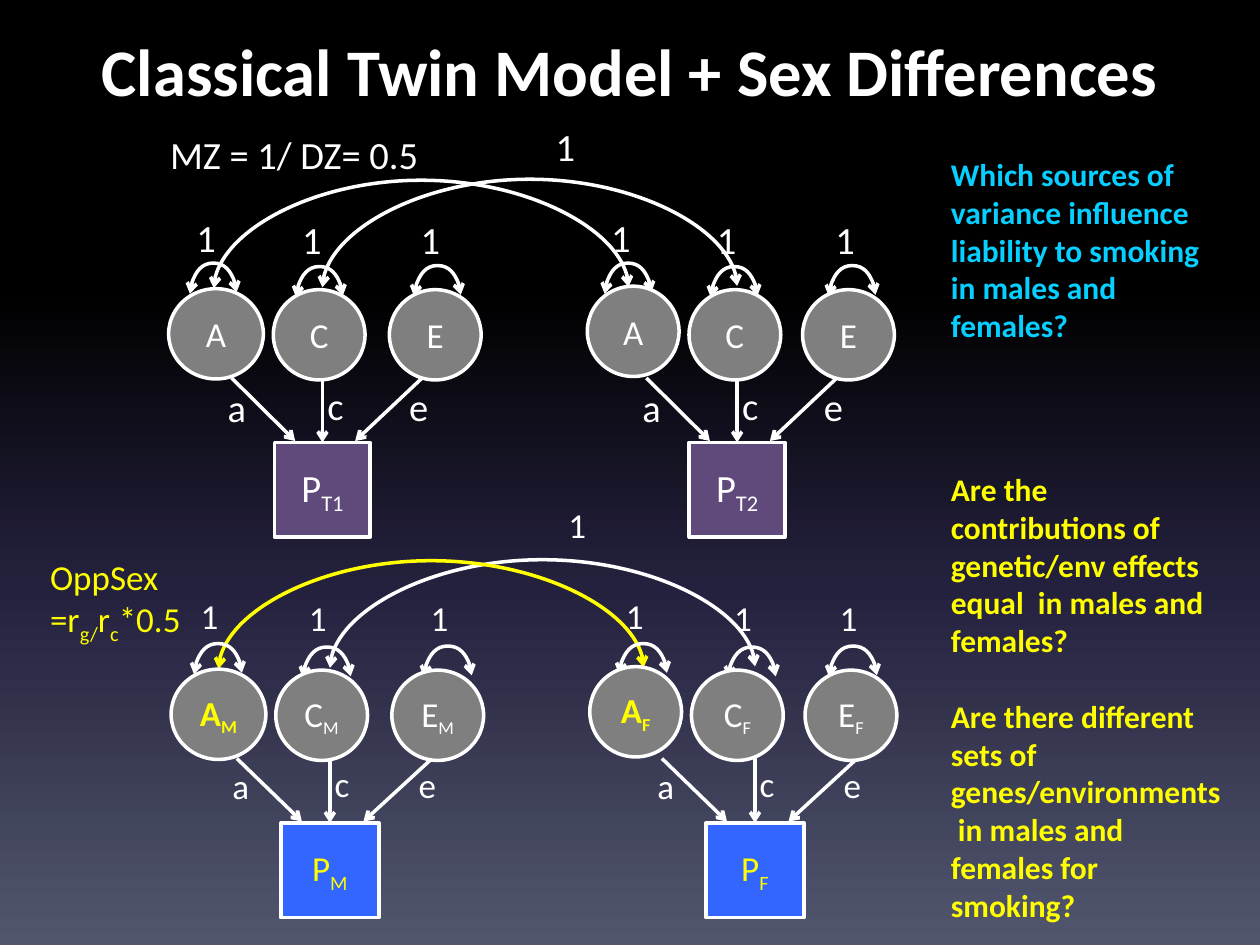
import lxml.etree
import pptx
import pptx.dml.color
import pptx.enum.shapes
import pptx.enum.text
import pptx.oxml.ns
import pptx.util

Cm = pptx.util.Cm
Pt = pptx.util.Pt
RGBColor = pptx.dml.color.RGBColor
SHAPE = pptx.enum.shapes.MSO_SHAPE
LINK = pptx.enum.shapes.MSO_CONNECTOR
ANCHOR = pptx.enum.text.MSO_ANCHOR
ALIGN = pptx.enum.text.PP_ALIGN
FIT = pptx.enum.text.MSO_AUTO_SIZE
qn = pptx.oxml.ns.qn

WHITE = RGBColor(0xFF, 0xFF, 0xFF)
YELLOW = RGBColor(0xFF, 0xFF, 0x00)
CYAN = RGBColor(0x07, 0xCF, 0xFF)
GRAY = RGBColor(0x7F, 0x7F, 0x7F)
PURPLE = RGBColor(0x60, 0x4A, 0x7B)
BLUE = RGBColor(0x33, 0x66, 0xFF)
STOPS = [
    (0, RGBColor(0x00, 0x00, 0x00)),
    (31, RGBColor(0x00, 0x00, 0x00)),
    (62, RGBColor(0x24, 0x21, 0x3E)),
    (100, RGBColor(0x51, 0x56, 0x6D)),
]

deck = pptx.Presentation()
deck.slide_width = Cm(25.4)
deck.slide_height = Cm(19.05)
slide = deck.slides.add_slide(deck.slide_layouts[6])
shapes = slide.shapes

fill = slide.background.fill
fill.gradient()
fill.gradient_angle = 270
ramp = slide.element.find(".//" + qn("a:gsLst"))
for stop in list(ramp):
    ramp.remove(stop)
for spot, tint in STOPS:
    stop = lxml.etree.SubElement(ramp, qn("a:gs"), pos=str(spot * 1000))
    lxml.etree.SubElement(stop, qn("a:srgbClr"), val=str(tint))


def write(text, at, shape=None, size=20, sub=None, color=WHITE, bold=False,
          wrap=True, mid=False, gap=0):
    own = shape is None
    if own:
        shape = shapes.add_textbox(*[Cm(v) for v in at])
    frame = shape.text_frame
    frame.word_wrap = wrap
    if own and not mid:
        frame.auto_size = FIT.SHAPE_TO_FIT_TEXT
    frame.vertical_anchor = ANCHOR.MIDDLE if mid else ANCHOR.TOP
    for row, line in enumerate(text.split("\n")):
        para = frame.add_paragraph() if row else frame.paragraphs[0]
        para.alignment = ALIGN.CENTER if mid else ALIGN.LEFT
        if row:
            para.space_before = Pt(gap)
        for n, part in enumerate(line.split("_")):
            run = para.add_run()
            run.text = part
            font = run.font
            font.name = "Calibri"
            font.size = Pt(sub if sub and n % 2 else size)
            font.bold = bold
            font.color.rgb = color
            if n % 2:
                run.font._element.set("baseline", "-25000")


def join(x1, y1, x2, y2, rise=0, color=WHITE):
    if rise:
        thin = 0.03
        mid, half = (x1 + x2) / 2, (x2 - x1) / 2
        wire = shapes.add_connector(LINK.CURVE, Cm(mid - thin / 2), Cm(y1 - half),
                                    Cm(mid + thin / 2), Cm(y1 + half))
        form = wire.element.spPr.find(qn("a:xfrm"))
        for key, val in (("rot", "5400000"), ("flipH", "1"), ("flipV", "1")):
            form.set(key, val)
        bend = wire.element.spPr.find(qn("a:prstGeom")).get_or_add_avLst()
        lxml.etree.SubElement(bend, qn("a:gd"), name="adj1",
                              fmla=f"val {round(rise / thin * 100000)}")
    else:
        wire = shapes.add_connector(LINK.STRAIGHT, Cm(x1), Cm(y1), Cm(x2), Cm(y2))
    wire.line.width = Pt(2)
    wire.line.color.rgb = color
    edge = wire.element.spPr.find(qn("a:ln"))
    for end in ("a:headEnd", "a:tailEnd") if rise else ("a:tailEnd",):
        lxml.etree.SubElement(edge, qn(end), type="arrow")
    lxml.etree.SubElement(wire.element.spPr, qn("a:effectLst"))
    return wire


write("Classical Twin Model + Sex Differences", (1.27, 0.3, 22.86, 2.21),
      size=38, bold=True, mid=True)
write("OppSex =r_g/_r_c_*0.5", (0.76, 11.07, 5.31, 1.96), color=YELLOW)
write("MZ = 1/ DZ= 0.5", (3.18, 2.51, 5.54, 1.19), size=22)
write("Which sources of variance influence liability to smoking in males and females?",
      (18.92, 3, 5.74, 4.11), size=18, color=CYAN, bold=True)
write("Are the contributions of genetic/env effects equal  in males and females?\n"
      "Are there different sets of genes/environments  in males and females for smoking?",
      (18.92, 9.35, 6.05, 8.71), size=18, color=YELLOW, bold=True, gap=21.6)

PATHS = [
    ("a", -1.83, -0.55, -2.16, 7.62, -2.2, 5.91, -2.54, 4.19),
    ("c", 0, 0, -0.15, 7.57, -0.06, 5.98, -0.41, 4.24),
    ("e", 2.01, 0.66, 1.5, 7.59, 2.32, 5.96, 1.98, 4.24),
]
ROUNDS = [
    [("A", 3.4, 5.82, 1.91), ("C", 5.51, 5.84, 1.85), ("E", 7.85, 5.84, 1.85)],
    [("A", 11.84, 5.77, 1.85), ("C", 13.89, 5.84, 1.85), ("E", 16.18, 5.84, 1.85)],
]
ROWS = [
    (6.5, 0, 0, 1, 22, PURPLE, WHITE, ("T1", "T2"), ("", "")),
    (6.65, 0.05, 7.67, 1.025, 20, BLUE, YELLOW, ("M", "F"), ("_M", "_F")),
]

for base, slip, down, zoom, size, paint, ink, names, tails in ROWS:
    step = 8.36 * zoom
    join(base, 5.78 + down, base + step, 5.78 + down, rise=2.18)
    left = base - 2.19 * zoom
    join(left, 5.8 + down, left + step, 5.8 + down, rise=2.18, color=ink)
    write("1", (base + 4.45 * zoom, 2.36 + down, 1, 1.42), size=size, wrap=False)

    for side in range(2):
        hub = base + side * step
        stems = {}
        for name, top, tip, tx, ty, cx, cy, ox, oy in PATHS:
            stems[name] = join(hub + top * zoom, 7.62 + down,
                               hub + tip * zoom, 8.89 + down)
            write(name, (hub + tx * zoom, ty + down, 1.02, 1.42), size=size, wrap=False)
            nudge = 0.4 if down and side and name == "e" else 0
            mid, half = hub + cx * zoom - nudge, 0.47 * zoom
            join(mid - half, cy + down, mid + half, cy + down, rise=0.62)
            write("1", (hub + ox * zoom - nudge * 0.8, oy + down, 0.25, 1.42), size=size)

        wide = 1.93 * zoom
        nodes = [(SHAPE.RECTANGLE, "P_" + names[side], hub - wide / 2, 8.92 + down,
                  wide, 1.91, paint, ink, size, size, False)]
        for name, x, y, w in ROUNDS[side]:
            gene = name == "A" and down > 0
            nodes.append((SHAPE.OVAL, name + tails[side], x + slip, y + down, w, 1.82,
                          GRAY, ink if gene else WHITE, 20, 18, gene))
        for kind, text, x, y, w, h, tint, color, big, small, bold in nodes:
            node = shapes.add_shape(kind, Cm(x), Cm(y), Cm(w), Cm(h))
            node.shadow.inherit = False
            node.fill.solid()
            node.fill.fore_color.rgb = tint
            node.line.color.rgb = WHITE
            node.line.width = Pt(2)
            write(text, None, shape=node, size=big, sub=small, color=color,
                  bold=bold, wrap=False, mid=True)
            if kind == SHAPE.RECTANGLE:
                stems["c"].end_connect(node, 0)

deck.save("out.pptx")
